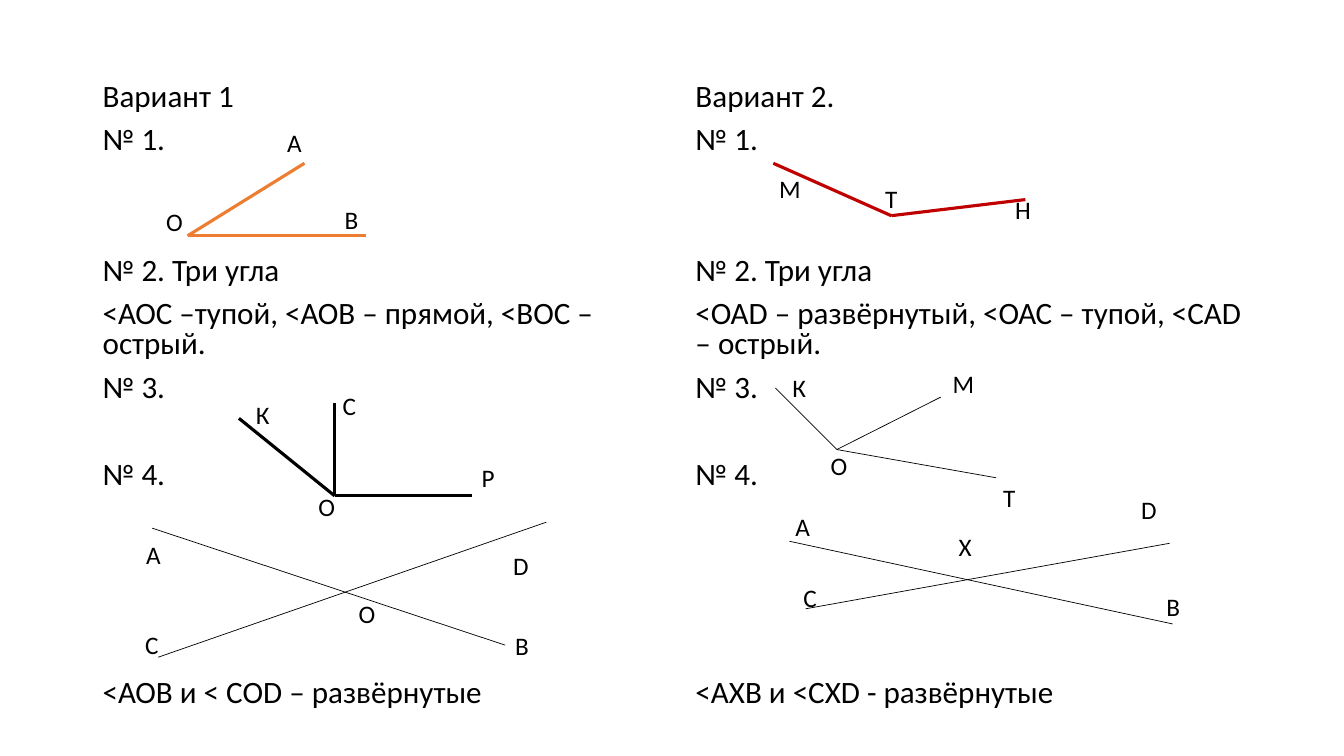
import pptx
import pptx.dml.color
import pptx.enum.shapes
import pptx.enum.text
import pptx.oxml
import pptx.oxml.ns
import pptx.util

Inches = pptx.util.Inches
Pt = pptx.util.Pt

COLORS = {"black": "000000", "orange": "ED7D31", "red": "C00000"}
LABEL_WIDTHS = {"А": 0.35, "О": 0.37, "В": 0.34, "К": 0.34, "Р": 0.33, "С": 0.34,
                "D": 0.36, "М": 0.42, "Т": 0.32, "Н": 0.36, "Х": 0.33}
LABEL_HEIGHT = 0.4
GAP, LINE_STEP = 9.6, 31.27
SKIPPED_LINES = [0, 0, 2, 0, 0, 1, 4]

VARIANT_1 = {
    "texts": ["Вариант 1", "№ 1.", "№ 2. Три угла",
              "<АОС –тупой, <АОВ – прямой, <ВОС – острый.",
              "№ 3.", "№ 4.", "<АОВ и < СОD – развёрнутые"],
    "figures": [
        {"color": "orange", "weight": 2.25,
         "rays": {(0.94, 1.56): [(2.1, 0.84), (2.71, 1.56)]},
         "labels": {"А": (1.83, 0.43), "О": (0.63, 1.22), "В": (2.4, 1.2)}},
        {"color": "black", "weight": 2.25,
         "rays": {(2.4, 4.14): [(1.45, 3.37), (3.76, 4.14), (2.4, 3.22)]},
         "labels": {"К": (1.52, 3.13), "О": (2.14, 4.05),
                    "Р": (3.76, 3.76), "С": (2.38, 3.04)}},
        {"color": "black", "weight": 0.5,
         "rays": {(0.59, 4.46): [(4.09, 5.62)], (0.65, 5.74): [(4.5, 4.4)]},
         "labels": {"А": (0.43, 4.52), "В": (4.09, 5.42), "С": (0.42, 5.41),
                    "D": (4.07, 4.63), "О": (2.54, 5.11)}},
    ],
}

VARIANT_2 = {
    "texts": ["Вариант 2.", "№ 1.", "№ 2. Три угла",
              "<ОАD – развёрнутый, <ОАС – тупой, <САD – острый.",
              "№ 3.", "№ 4.", "<АХВ и <СХD - развёрнутые"],
    "figures": [
        {"color": "red", "weight": 2.25,
         "rays": {(2.04, 1.36): [(0.87, 0.84), (3.37, 1.2)]},
         "labels": {"М": (0.83, 0.89), "Т": (1.88, 0.99), "Н": (3.17, 1.1)}},
        {"color": "black", "weight": 0.5,
         "rays": {(1.5, 3.68): [(2.53, 3.16), (3.08, 3.96), (0.89, 3.07)]},
         "labels": {"М": (2.55, 2.83), "О": (1.34, 3.64),
                    "Т": (3.05, 3.96), "К": (0.96, 2.86)}},
        {"color": "black", "weight": 0.5,
         "rays": {(1.03, 4.59): [(4.83, 5.41)], (1.19, 5.26): [(4.8, 4.61)]},
         "labels": {"А": (0.99, 4.24), "В": (4.67, 5.04), "С": (1.07, 4.95),
                    "D": (4.42, 4.07), "Х": (2.61, 4.44)}},
    ],
}


def rgb(name):
    return pptx.dml.color.RGBColor.from_string(COLORS[name])


def add_run(p, text, size):
    r = p.add_run()
    r.text = text
    for key, value in {"name": "Calibri", "size": Pt(size)}.items():
        setattr(r.font, key, value)
    r.font.color.rgb = rgb("black")


def add_text_box(s, x, y, w, h, wrap):
    tf = s.shapes.add_textbox(Inches(x), Inches(y), Inches(w), Inches(h)).text_frame
    tf.word_wrap = wrap
    return tf


def add_line(s, x1, y1, x2, y2, color, weight):
    sp = s.shapes.add_connector(pptx.enum.shapes.MSO_CONNECTOR.STRAIGHT,
                                Inches(x1), Inches(y1), Inches(x2), Inches(y2))
    sp.line.color.rgb = rgb(color)
    sp.line.width = Pt(weight)
    effects = pptx.oxml.parse_xml("<a:effectLst %s/>" % pptx.oxml.ns.nsdecls("a"))
    sp._element.spPr.append(effects)


def add_tasks(s, x, y, w, h, texts):
    tf = add_text_box(s, x, y, w, h, True)
    for i, (text, skipped) in enumerate(zip(texts, SKIPPED_LINES)):
        p = tf.add_paragraph() if i else tf.paragraphs[0]
        before = GAP + skipped * LINE_STEP if i else 0
        fmt = {"line_spacing": 0.8, "space_before": Pt(before), "space_after": Pt(0)}
        for key, value in fmt.items():
            setattr(p, key, value)
        add_run(p, text, 22.2)


def add_figure(s, x, y, figure):
    for (x1, y1), ends in figure["rays"].items():
        for x2, y2 in ends:
            add_line(s, x + x1, y + y1, x + x2, y + y2,
                     figure["color"], figure["weight"])
    for letter, (dx, dy) in figure["labels"].items():
        tf = add_text_box(s, x + dx, y + dy, LABEL_WIDTHS[letter], LABEL_HEIGHT, False)
        tf.auto_size = pptx.enum.text.MSO_AUTO_SIZE.SHAPE_TO_FIT_TEXT
        add_run(tf.paragraphs[0], letter, 18)


def add_variant(s, x, y, w, h, variant):
    add_tasks(s, x, y, w, h, variant["texts"])
    for figure in variant["figures"]:
        add_figure(s, x, y, figure)


def main():
    prs = pptx.Presentation()
    prs.slide_width, prs.slide_height = Inches(13.33), Inches(7.5)
    s = prs.slides.add_slide(prs.slide_layouts[6])
    add_variant(s, 0.92, 0.78, 5.67, 6.32, VARIANT_1)
    add_variant(s, 6.8, 0.78, 5.67, 6.56, VARIANT_2)
    prs.save("out.pptx")


if __name__ == "__main__":
    main()
